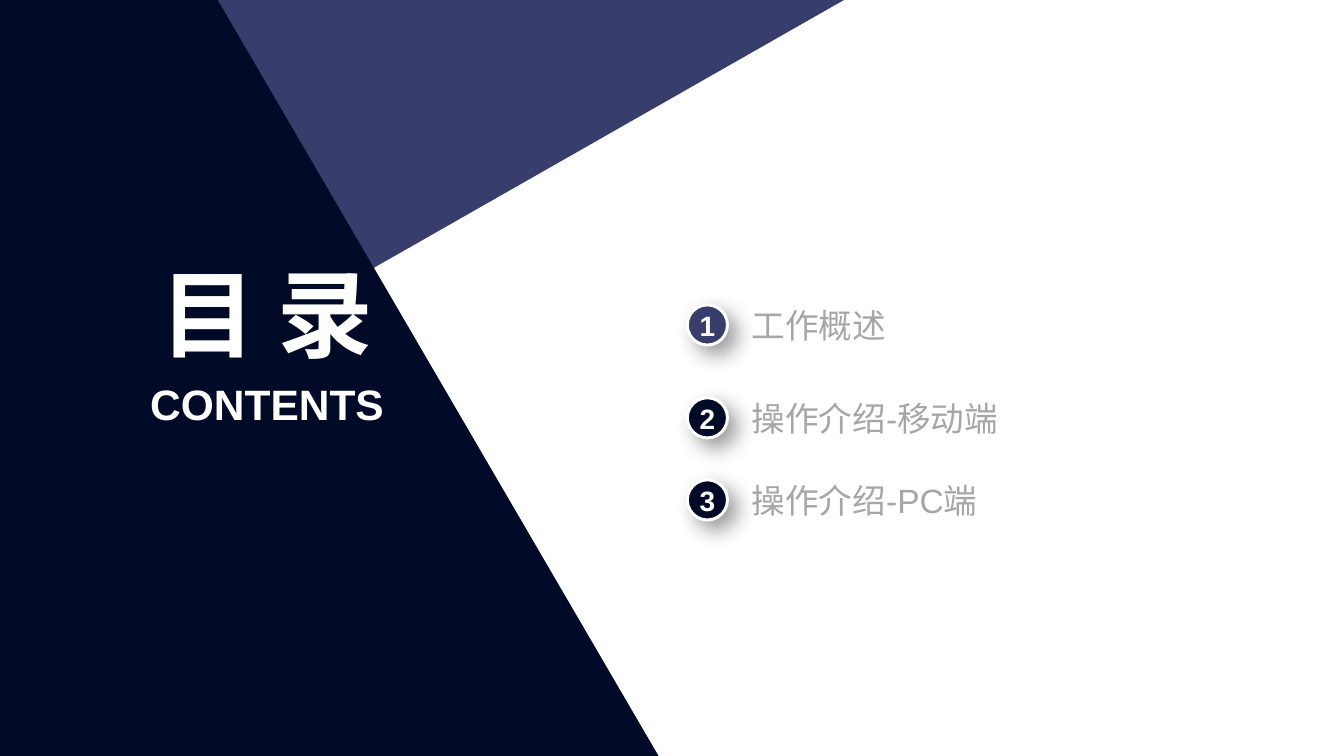
from collections import namedtuple
from dataclasses import dataclass

from lxml import etree
from pptx import Presentation
from pptx.dml.color import RGBColor
from pptx.enum import shapes, text
from pptx.oxml import ns
from pptx.util import Inches, Pt

Box = namedtuple("Box", "left top width height")


@dataclass(frozen=True)
class Theme:
    font: str = "Arial"
    navy: str = "010B28"
    indigo: str = "383E6B"
    white: str = "FFFFFF"
    grey: str = "A6A6A6"
    shadow: str = "000000"
    title_size: float = 72
    subtitle_size: float = 32
    item_size: float = 25.3
    number_size: float = 21.1


THEME = Theme()
PAGE = Box(0, 0, 14.06, 7.91)
ITEMS = [  # label, row top as a share of the list height, badge colour
    ("工作概述", 0, THEME.indigo),
    ("操作介绍-移动端", 0.43, THEME.navy),
    ("操作介绍-PC端", 0.81, THEME.navy),
]


def inches(box):
    return [Inches(length) for length in box]


def write(shape, words, size, color, bold=False, align=text.PP_ALIGN.LEFT,
          anchor=text.MSO_ANCHOR.MIDDLE):
    frame = shape.text_frame
    frame.word_wrap = True
    frame.vertical_anchor = anchor
    frame.margin_left = frame.margin_right = 0
    frame.margin_top = frame.margin_bottom = 0
    para = frame.paragraphs[0]
    para.alignment = align
    span = para.add_run()
    span.text = words
    span.font.name = THEME.font
    span.font.size = Pt(size)
    span.font.bold = bold
    span.font.color.rgb = RGBColor.from_string(color)


def add_label(page, box, words, **style):
    write(page.shapes.add_textbox(*inches(box)), words, **style)


def fill_shape(shape, color):
    shape.shadow.inherit = False
    shape.fill.solid()
    shape.fill.fore_color.rgb = RGBColor.from_string(color)


def add_polygon(page, box, shares, color):
    """Draw a filled outline whose corners are shares of the box."""
    points = [(Inches(box.left + x * box.width), Inches(box.top + y * box.height))
              for x, y in shares]
    builder = page.shapes.build_freeform(*points[0])
    builder.add_line_segments(points[1:], close=True)
    shape = builder.convert_to_shape()
    fill_shape(shape, color)
    shape.line.fill.background()


def drop_shadow(shape, blur=16, distance=9, angle=45, opacity=40):
    effects = shape._element.spPr.find(ns.qn("a:effectLst"))
    outer = etree.SubElement(
        effects, ns.qn("a:outerShdw"), blurRad=str(Pt(blur)), dist=str(Pt(distance)),
        dir=str(angle * 60000), algn="tl", rotWithShape="0")
    color = etree.SubElement(outer, ns.qn("a:srgbClr"), val=THEME.shadow)
    etree.SubElement(color, ns.qn("a:alpha"), val=str(opacity * 1000))


def add_backdrop(page, box):
    # Indigo wedge behind, slanted navy panel in front
    add_polygon(page, box, [(0, 0), (0.628, 0), (0, 0.636)], THEME.indigo)
    add_polygon(page, box, [(0, 0), (0.162, 0), (0.49, 1), (0, 1)], THEME.navy)


def add_heading(page, box):
    style = dict(color=THEME.white, bold=True, align=text.PP_ALIGN.CENTER)
    title = Box(box.left, box.top, box.width, box.height * 0.66)
    subtitle = Box(box.left, box.top + box.height * 0.705, box.width, box.height * 0.295)
    add_label(page, title, "目 录", size=THEME.title_size, **style)
    add_label(page, subtitle, "CONTENTS", size=THEME.subtitle_size,
              anchor=text.MSO_ANCHOR.TOP, **style)


def add_item(page, box, number, label, color):
    # Round numbered badge, as wide as the row is high
    badge = page.shapes.add_shape(
        shapes.MSO_SHAPE.OVAL, *inches((box.left, box.top, box.height, box.height)))
    fill_shape(badge, color)
    badge.line.color.rgb = RGBColor.from_string(THEME.white)
    badge.line.width = Pt(2.25)
    drop_shadow(badge)
    write(badge, str(number), THEME.number_size, THEME.white, bold=True,
          align=text.PP_ALIGN.CENTER)
    # Label beside the badge
    indent = box.height * 1.6
    add_label(page, Box(box.left + indent, box.top, box.width - indent, box.height),
              label, size=THEME.item_size, color=THEME.grey)


def add_contents(page, box):
    row_height = box.height * 0.186
    for number, (label, share, color) in enumerate(ITEMS, start=1):
        row = Box(box.left, box.top + share * box.height, box.width, row_height)
        add_item(page, row, number, label, color)


def main():
    deck = Presentation()
    deck.slide_width, deck.slide_height = Inches(PAGE.width), Inches(PAGE.height)
    page = deck.slides.add_slide(deck.slide_layouts[6])
    add_backdrop(page, PAGE)
    add_heading(page, Box(1.36, 2.66, 2.87, 1.83))
    add_contents(page, Box(7.19, 3.19, 4.27, 2.26))
    deck.save("out.pptx")


if __name__ == "__main__":
    main()
